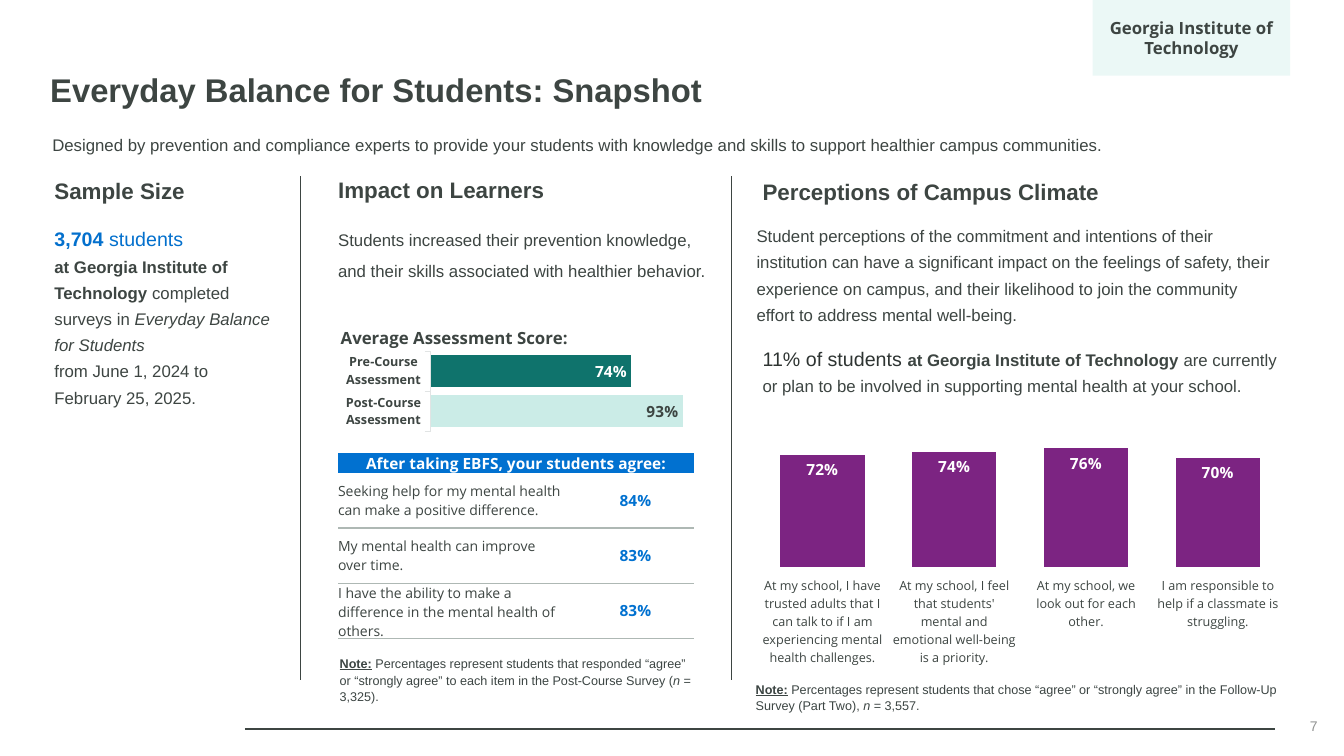
from lxml.etree import SubElement
from pptx import Presentation
from pptx.chart.data import CategoryChartData
from pptx.dml.color import RGBColor
from pptx.enum.chart import XL_CHART_TYPE, XL_LABEL_POSITION, XL_TICK_MARK
from pptx.enum.shapes import MSO_CONNECTOR, MSO_SHAPE
from pptx.enum.text import MSO_ANCHOR, PP_ALIGN
from pptx.oxml.ns import qn
from pptx.util import Pt

INK, NOTE_INK, BLUE, WHITE, RULE = "3D4542", "3C4543", "0171D0", "FFFFFF", "AEB8B4"
SANS, OPEN = "Arial", "Open Sans"
COLLEGE = "Georgia Institute of Technology"
COURSE = "Everyday Balance for Students"


def color(value):
    """Return the colour of a hex string."""
    return RGBColor.from_string(value)


def style_font(font, size, ink=INK, style="", name=SANS):
    """Set a font; style holds the letters b, i and u."""
    font.name, font.size = name, Pt(size)
    font.color.rgb = color(ink)
    font.bold, font.italic = "b" in style, "i" in style
    if "u" in style:
        font.underline = True


def write(paragraph, runs, spacing=None, align=None, before=0, after=0):
    """Fill a paragraph with (text, size, ink, style, font) runs."""
    for text, *look in runs:
        if text == "\v":
            paragraph.add_line_break()
            continue
        run = paragraph.add_run()
        run.text = text
        style_font(run.font, *look)
    paragraph.line_spacing = spacing
    paragraph.alignment = align
    paragraph.space_before, paragraph.space_after = Pt(before), Pt(after)


def set_frame(frame, margins=(0, 0, 0, 0), anchor=MSO_ANCHOR.TOP):
    """Make a text frame wrap, with margins and an anchor."""
    frame.word_wrap = True
    frame.vertical_anchor = anchor
    frame.margin_left, frame.margin_top, frame.margin_right, frame.margin_bottom = map(Pt, margins)


def add_text(slide, box, runs, margins=(0, 0, 0, 0), anchor=MSO_ANCHOR.TOP, **layout):
    """Add a text box with one paragraph and return its frame."""
    frame = slide.shapes.add_textbox(*map(Pt, box)).text_frame
    set_frame(frame, margins, anchor)
    write(frame.paragraphs[0], runs, **layout)
    return frame


def add_line(slide, start, end, width, ink=INK):
    """Add a straight line without shadow."""
    line = slide.shapes.add_connector(MSO_CONNECTOR.STRAIGHT, *map(Pt, start + end))
    line.line.color.rgb, line.line.width = color(ink), Pt(width)
    SubElement(line.element.spPr, qn("a:effectLst"))


def add_badge(slide, box, text):
    """Add the pale rectangle with the college name."""
    badge = slide.shapes.add_shape(MSO_SHAPE.RECTANGLE, *map(Pt, box))
    badge.shadow.inherit = False
    badge.fill.solid()
    badge.fill.fore_color.rgb = color("3CC0AF")
    SubElement(badge.element.spPr.find(".//" + qn("a:srgbClr")), qn("a:alpha"), val="10000")
    badge.line.fill.background()
    set_frame(badge.text_frame, (7.2, 0, 7.2, 0), MSO_ANCHOR.MIDDLE)
    write(badge.text_frame.paragraphs[0], [(text, 12, INK, "b", OPEN)], align=PP_ALIGN.CENTER)


def set_layout(parent, position, **settings):
    """Give a chart part a manual layout."""
    layout = parent.find(qn("c:layout"))
    if layout is None:
        layout = parent.makeelement(qn("c:layout"))
        parent.insert(position, layout)
    manual = SubElement(layout, qn("c:manualLayout"))
    for name, value in settings.items():
        SubElement(manual, qn("c:" + name), val=str(value))


def add_bars(slide, kind, box, values, fill, plot_box, gap, maximum, axis_style=""):
    """Add a one-series percentage chart and return it."""
    data = CategoryChartData(number_format="0%")
    data.categories = list(values)
    data.add_series("Series 1", list(values.values()))
    chart = slide.shapes.add_chart(kind, *map(Pt, box), data).chart
    chart.has_legend = chart.has_title = False
    style_font(chart.font, 10)
    left, top, width, height = plot_box
    set_layout(chart.element.find(".//" + qn("c:plotArea")), 0, layoutTarget="inner",
               xMode="edge", yMode="edge", x=left, y=top, w=width, h=height)
    value_axis, category_axis = chart.value_axis, chart.category_axis
    value_axis.minimum_scale, value_axis.maximum_scale = 0, maximum
    value_axis.has_major_gridlines = value_axis.visible = False
    category_axis.major_tick_mark = XL_TICK_MARK.OUTSIDE
    category_axis.format.line.fill.background()
    style_font(category_axis.tick_labels.font, 9, INK, axis_style, OPEN)
    plot = chart.plots[0]
    plot.gap_width, plot.vary_by_categories = gap, False
    series = plot.series[0]
    series.format.fill.solid()
    series.format.fill.fore_color.rgb = color(fill)
    labels = series.data_labels
    labels.show_value, labels.position = True, XL_LABEL_POSITION.INSIDE_END
    labels.number_format, labels.number_format_is_linked = "0%", False
    style_font(labels.font, 11, WHITE, "b", OPEN)
    return chart


def add_scores(slide):
    """Add the chart of scores before and after the course."""
    scores = {"Post-Course Assessment": 0.93, "Pre-Course Assessment": 0.74}
    chart = add_bars(slide, XL_CHART_TYPE.BAR_CLUSTERED, (241.2, 229.7, 260, 99.4), scores,
                     "0F736C", (0.256, 0.213, 0.744, 0.576), 23, 1, "b")
    chart.has_title = True
    title = chart.chart_title.text_frame.paragraphs[0]
    write(title, [("Average Assessment Score:", 12, INK, "b", OPEN)])
    set_layout(chart.element.find(".//" + qn("c:title")), 1,
               xMode="edge", yMode="edge", x=0, y=0)
    axis_line = chart.category_axis.format.line
    axis_line.color.rgb, axis_line.width = color("E1E4E4"), Pt(0.75)
    post_course = chart.plots[0].series[0].points[0]
    post_course.format.fill.solid()
    post_course.format.fill.fore_color.rgb = color("CBECE7")
    style_font(post_course.data_label.font, 11, INK, "b", OPEN)
    post_course.data_label.position = XL_LABEL_POSITION.INSIDE_END


def set_cell(cell, runs, align, left=0, fill=None, ruled=()):
    """Fill a table cell and draw lines on its ruled sides."""
    cell.vertical_anchor = MSO_ANCHOR.MIDDLE
    cell.margin_left = Pt(left)
    cell.margin_top = cell.margin_right = cell.margin_bottom = 0
    write(cell.text_frame.paragraphs[0], runs, align=align)
    properties = cell._tc.get_or_add_tcPr()
    for side in ("lnL", "lnR", "lnT", "lnB"):
        border = SubElement(properties, qn("a:" + side), w=str(Pt(1)))
        if side in ruled:
            SubElement(SubElement(border, qn("a:solidFill")), qn("a:srgbClr"), val=RULE)
        else:
            SubElement(border, qn("a:noFill"))
    if fill:
        cell.fill.solid()
        cell.fill.fore_color.rgb = color(fill)
    else:
        cell.fill.background()


def add_agreement(slide, box, heading, answers):
    """Add the table of statements and shares of agreement."""
    table = slide.shapes.add_table(len(answers) + 1, 2, *map(Pt, box)).table
    table.first_row = table.horz_banding = False
    table.columns[0].width, table.columns[1].width = Pt(163.2), Pt(91.2)
    table.rows[0].height = Pt(14.4)
    table.cell(0, 0).merge(table.cell(0, 1))
    set_cell(table.cell(0, 0), [(heading, 11, WHITE, "b", OPEN)], PP_ALIGN.CENTER, fill=BLUE)
    for row, (statement, share) in enumerate(answers, 1):
        table.rows[row].height = Pt(39.5)
        ruled = ("lnT", "lnB") if row > 1 else ("lnB",)
        set_cell(table.cell(row, 0), [(statement, 10, INK, "", OPEN)], PP_ALIGN.LEFT, ruled=ruled)
        set_cell(table.cell(row, 1), [(share, 11, BLUE, "b", OPEN)], PP_ALIGN.CENTER, 7.2, ruled=ruled)


def add_note(slide, box, text, end, **frame):
    """Add a note whose sample size is marked by an italic n."""
    runs = [("Note:", 9, NOTE_INK, "bu"), (text, 9, NOTE_INK), ("n", 9, NOTE_INK, "i"), (end, 9, NOTE_INK)]
    add_text(slide, box, runs, spacing=Pt(12), after=2, **frame)


def main():
    """Build the snapshot slide."""
    presentation = Presentation()
    presentation.slide_width, presentation.slide_height = Pt(960), Pt(540)
    slide = presentation.slides.add_slide(presentation.slide_layouts[6])
    inset, middle = (7.2, 3.6, 7.2, 3.6), MSO_ANCHOR.MIDDLE

    add_line(slide, (175, 520.5), (911, 520.5), 1.5)
    for divider in (214.6, 522.7):
        add_line(slide, (divider, 126), (divider, 486), 1)
    add_text(slide, (732.2, 504, 216, 28.8), [("7", 10, "929493")], inset, middle, align=PP_ALIGN.RIGHT)
    add_text(slide, (28.8, 40.3, 815.8, 50.4), [(f"{COURSE}: Snapshot", 23.4, INK, "b")],
             inset, middle, spacing=0.9)
    add_text(slide, (37.4, 92, 851.8, 35.3), [(
        "Designed by prevention and compliance experts to provide your students with knowledge "
        "and skills to support healthier campus communities.", 12)], spacing=1.3)
    add_badge(slide, (780.5, 0, 141.1, 54), COLLEGE)

    add_text(slide, (38.9, 126.7, 209.5, 37.4), [("Sample Size", 16, INK, "b")])
    sample = add_text(slide, (38.9, 157, 155, 195), [("3,704 ", 14, "0370CD", "b"), ("students", 14, "0370CD")],
                      spacing=1.3)
    write(sample.add_paragraph(), [
        (f"at {COLLEGE} ", 12, INK, "b"), ("completed surveys in ", 12), (COURSE, 12, INK, "i"), ("\v",),
        ("from June 1, 2024 to February 25, 2025.", 12)], spacing=1.3, after=12)

    impact = add_text(slide, (241.5, 126, 267.8, 90.7), [("Impact on Learners", 16, INK, "b")])
    write(impact.add_paragraph(), [(
        "Students increased their prevention knowledge, and their skills associated with "
        "healthier behavior.", 12)], spacing=1.5, before=12)
    add_scores(slide)
    add_agreement(slide, (241.5, 323.3, 254.4, 132.9), "After taking EBFS, your students agree:", [
        ("Seeking help for my mental health can make a positive difference.", "84%"),
        ("My mental health can improve over time.", "83%"),
        ("I have the ability to make a difference in the mental health of others.", "83%")])
    add_note(slide, (235.6, 463.7, 266.4, 41), " Percentages represent students that responded “agree” or "
             "“strongly agree” to each item in the Post-Course Survey (", " = 3,325).", margins=inset)

    add_text(slide, (544.7, 127.4, 258.5, 37.4), [("Perceptions of Campus Climate", 16, INK, "b")])
    add_text(slide, (540.4, 157, 371.5, 85.7), [(
        "Student perceptions of the commitment and intentions of their institution can have a significant "
        "impact on the feelings of safety, their experience on campus, and their likelihood to join the "
        "community effort to address mental well-being.", 12)], spacing=1.3)
    add_text(slide, (544.7, 242.6, 372, 40.3), [
        ("11% of students ", 14, "2E3432"), (f"at {COLLEGE} ", 12, INK, "b"),
        ("are currently or plan to be involved in supporting mental health at your school.", 12)], spacing=1.3)
    add_bars(slide, XL_CHART_TYPE.COLUMN_CLUSTERED, (527.8, 290.2, 393.1, 201.6), {
        "At my school, I have trusted adults that I can talk to if I am experiencing mental health challenges.": 0.72,
        "At my school, I feel that students' mental and emotional well-being is a priority.": 0.74,
        "At my school, we look out for each other.": 0.76,
        "I am responsible to help if a classmate is struggling.": 0.7,
    }, "7C2482", (0.032, 0.072, 0.958, 0.499), 56, 0.9)
    add_note(slide, (539.8, 475.9, 388.8, 33.8), " Percentages represent students that chose “agree” or "
             "“strongly agree” in the Follow-Up Survey (Part Two), ", " = 3,557.", anchor=MSO_ANCHOR.BOTTOM)
    presentation.save("out.pptx")


if __name__ == "__main__":
    main()
